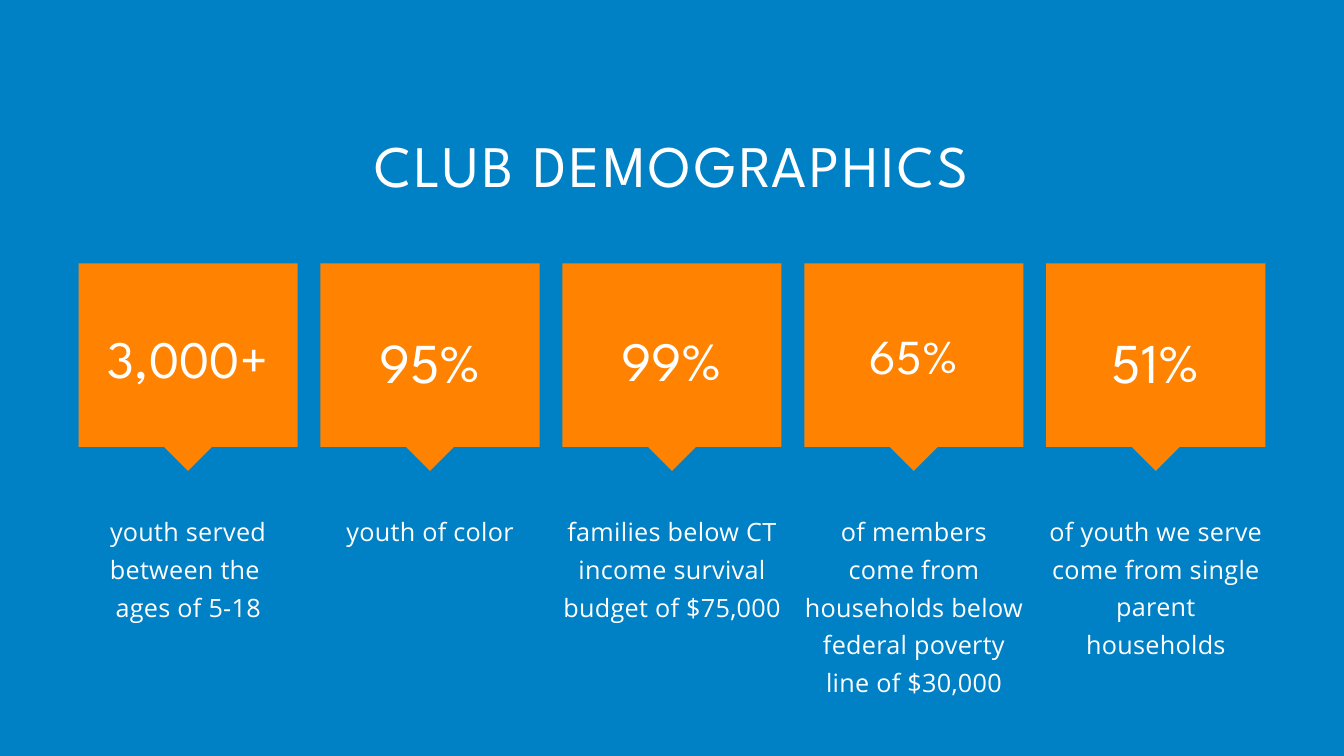
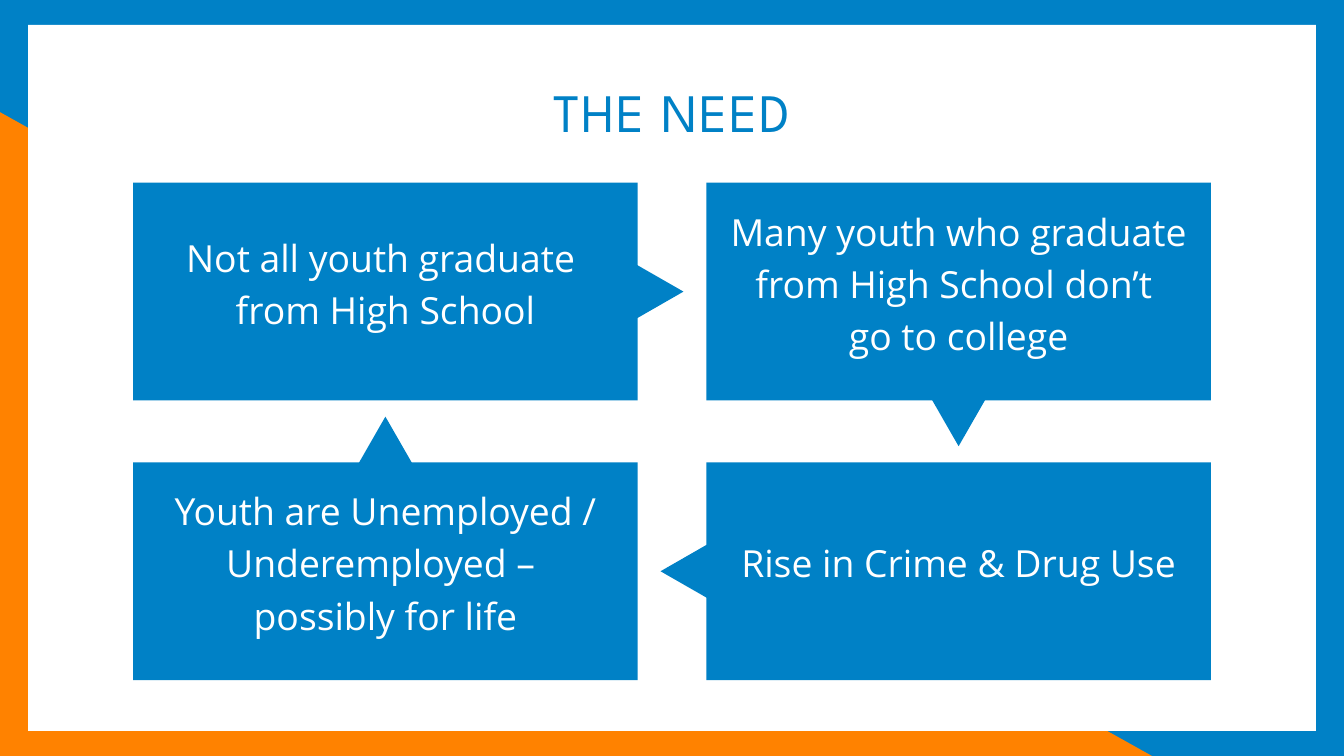
from pptx import Presentation
from pptx.dml.color import RGBColor
from pptx.enum.shapes import MSO_SHAPE as Preset
from pptx.enum.text import MSO_ANCHOR as Anchor, PP_ALIGN as Align
from pptx.util import Pt

BLUE = RGBColor(0x00, 0x81, 0xC6)
ORANGE = RGBColor(0xFF, 0x82, 0x00)
WHITE = RGBColor(0xFF, 0xFF, 0xFF)
HEADING_FONT = "League Spartan"
BODY_FONT = "Open Sans"


def add_block(slide, preset, box, color, rotation=0):
    block = slide.shapes.add_shape(preset, *map(Pt, box))
    block.fill.solid()
    block.fill.fore_color.rgb = color
    block.line.fill.background()
    block.shadow.inherit = False
    block.rotation = rotation


def add_text(slide, box, lines, font, size, leading, color=WHITE,
             tracking=0, inset=0, anchor=Anchor.TOP):
    frame = slide.shapes.add_textbox(*map(Pt, box)).text_frame
    frame.word_wrap = True
    frame.vertical_anchor = anchor
    frame.margin_left = frame.margin_right = Pt(inset)
    frame.margin_top = frame.margin_bottom = Pt(inset)
    for index, line in enumerate(lines):
        paragraph = frame.add_paragraph() if index else frame.paragraphs[0]
        paragraph.alignment = Align.CENTER
        paragraph.line_spacing = Pt(leading)
        run = paragraph.add_run()
        run.text = line
        run.font.name = font
        run.font.size = Pt(size)
        run.font.color.rgb = color
        if tracking:
            run._r.get_or_add_rPr().set("spc", str(round(tracking * 100)))


deck = Presentation()
deck.slide_width, deck.slide_height = Pt(1440), Pt(810)
demographics, need = [deck.slides.add_slide(deck.slide_layouts[6]) for _ in range(2)]
for slide in (demographics, need):
    slide.background.fill.solid()
    slide.background.fill.fore_color.rgb = BLUE

add_text(demographics, (197.3, 131.8, 1045.4, 80), ["CLUB DEMOGRAPHICS"],
         HEADING_FONT, 63, 81.9, tracking=3.1)

STATS = [
    ("3,000+", 56.3, 220, ["youth served between the ", "ages of 5-18"], 3),
    ("95%", 60.3, 140, ["youth of color"], 1),
    ("99%", 59.3, 141, ["families below CT income survival budget of $75,000"], 3),
    ("65%", 52.3, 122,
     ["of members come from households below federal poverty line of $30,000"], 5),
    ("51%", 60.3, 138, ["of youth we serve come from single parent households"], 4),
]
STAT_WIDTH, STAT_HEIGHT, STAT_TOP = 234.7, 196.6, 282.2
STAT_PITCH = 259.2
POINTER_WIDTH, POINTER_HEIGHT = 52, 26
LABEL_LEADING = 40.5

for column, (figure, size, figure_width, label, label_lines) in enumerate(STATS):
    left = 84.2 + column * STAT_PITCH
    center = left + STAT_WIDTH / 2
    add_block(demographics, Preset.RECTANGLE,
              (left, STAT_TOP, STAT_WIDTH, STAT_HEIGHT), ORANGE)
    add_block(demographics, Preset.ISOSCELES_TRIANGLE,
              (center - POINTER_WIDTH / 2, STAT_TOP + STAT_HEIGHT - 0.3,
               POINTER_WIDTH, POINTER_HEIGHT), ORANGE, 180)
    add_text(demographics, (center - figure_width / 2, 338, figure_width, size * 1.3),
             [figure], HEADING_FONT, size, size * 1.4)
    add_text(demographics, (left + 0.5, 545, 234, label_lines * LABEL_LEADING),
             label, BODY_FONT, 27, LABEL_LEADING, tracking=0.3)

add_block(need, Preset.RECTANGLE, (-464.4, 447.1, 1892.2, 793.4), ORANGE, 29.2)
add_block(need, Preset.RECTANGLE, (30.2, 26.8, 1379.6, 756.4), WHITE)

STEP_WIDTH, STEP_HEIGHT = 540.7, 233.3
STEP_LEFTS, STEP_TOPS = (142.6, 756.7), (195.8, 495.4)
ARROW_WIDTH, ARROW_HEIGHT = 112.4, 98
TEXT_RISE = 25.5
STEPS = [
    (0, 0, 1, 0, 90, ["Not all youth graduate ", "from High School"]),
    (1, 0, 0, 1, 180,
     ["Many youth who graduate from High School don’t ", "go to college"]),
    (0, 1, 0, -1, 0,
     ["Youth are Unemployed / Underemployed – ", "possibly for life"]),
    (1, 1, -1, 0, 270, ["Rise in Crime & Drug Use"]),
]

for column, row, toward_x, toward_y, rotation, statement in STEPS:
    left, top = STEP_LEFTS[column], STEP_TOPS[row]
    arrow_x = left + STEP_WIDTH * (1 + toward_x) / 2
    arrow_y = top + STEP_HEIGHT * (1 + toward_y) / 2
    add_block(need, Preset.ISOSCELES_TRIANGLE,
              (arrow_x - ARROW_WIDTH / 2, arrow_y - ARROW_HEIGHT / 2,
               ARROW_WIDTH, ARROW_HEIGHT), BLUE, rotation)
    add_block(need, Preset.RECTANGLE, (left, top, STEP_WIDTH, STEP_HEIGHT), BLUE)
    add_text(need, (left, top - TEXT_RISE, STEP_WIDTH, STEP_HEIGHT + TEXT_RISE),
             statement, BODY_FONT, 40, 56, inset=4, anchor=Anchor.MIDDLE)

add_text(need, (234.5, 72.7, 971, 77.8), ["THE NEED"],
         HEADING_FONT, 58, 81.2, BLUE, tracking=1.7)

deck.save("out.pptx")
